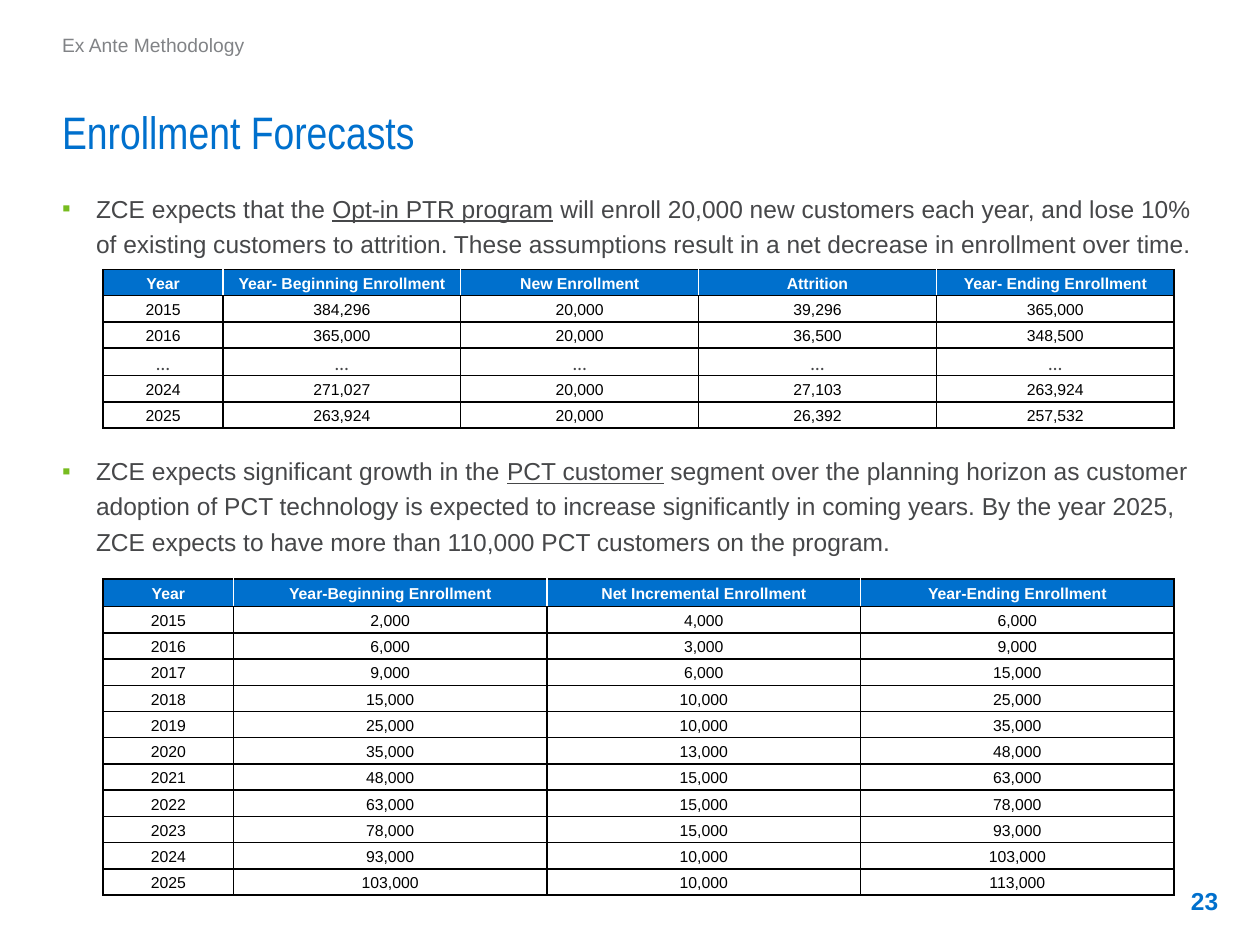
from dataclasses import dataclass

from lxml import etree
from pptx import Presentation
from pptx.dml.color import RGBColor
from pptx.enum.text import MSO_ANCHOR, MSO_AUTO_SIZE, PP_ALIGN
from pptx.oxml.ns import qn
from pptx.util import Pt

LEFT, CENTER, RIGHT = PP_ALIGN.LEFT, PP_ALIGN.CENTER, PP_ALIGN.RIGHT
TOP, MIDDLE, BOTTOM = MSO_ANCHOR.TOP, MSO_ANCHOR.MIDDLE, MSO_ANCHOR.BOTTOM
NO_FIT = MSO_AUTO_SIZE.NONE
COLORS = {
    "blue": "0070CD",
    "green": "77BC1F",
    "text": "464749",
    "gray": "818386",
    "black": "000000",
    "white": "FFFFFF",
}
INSETS = ("margin_left", "margin_top", "margin_right", "margin_bottom")
TABLE_LEFT = 59
ROW_HEIGHT = 15


@dataclass
class Style:
    size: float
    color: str
    name: str = "Arial"
    bold: bool = False


@dataclass
class Bullet:
    before: float
    lead: str
    underlined: str
    rest: str


@dataclass
class EnrollmentTable:
    top: float
    header_height: float
    widths: list[float]
    rows: list[str]


TITLE = Style(26, "blue", "Arial Narrow")
SECTION = Style(11, "gray")
BODY = Style(14, "text")
NUMBER = Style(14, "blue", bold=True)
HEADER = Style(9, "white", bold=True)
CELL = Style(9, "black")
ELLIPSIS = Style(11, "text", "Calibri")

BULLETS = [
    Bullet(0, "ZCE expects that the ", "Opt-in PTR program",
           " will enroll 20,000 new customers each year, and lose 10% of existing "
           "customers to attrition. These assumptions result in a net decrease in "
           "enrollment over time."),
    Bullet(107, "ZCE expects significant growth in the ", "PCT customer",
           " segment over the planning horizon as customer adoption of PCT technology "
           "is expected to increase significantly in coming years. By the year 2025, "
           "ZCE expects to have more than 110,000 PCT customers on the program."),
]

TABLES = [
    EnrollmentTable(154, ROW_HEIGHT, [68.4] + [135.9] * 4, [
        "Year|Year- Beginning Enrollment|New Enrollment|Attrition|Year- Ending Enrollment",
        "2015|384,296|20,000|39,296|365,000",
        "2016|365,000|20,000|36,500|348,500",
        "…|…|…|…|…",
        "2024|271,027|20,000|27,103|263,924",
        "2025|263,924|20,000|26,392|257,532",
    ]),
    EnrollmentTable(330.8, 15.8, [74.4] + [179.2] * 3, [
        "Year|Year-Beginning Enrollment|Net Incremental Enrollment|Year-Ending Enrollment",
        "2015|2,000|4,000|6,000",
        "2016|6,000|3,000|9,000",
        "2017|9,000|6,000|15,000",
        "2018|15,000|10,000|25,000",
        "2019|25,000|10,000|35,000",
        "2020|35,000|13,000|48,000",
        "2021|48,000|15,000|63,000",
        "2022|63,000|15,000|78,000",
        "2023|78,000|15,000|93,000",
        "2024|93,000|10,000|103,000",
        "2025|103,000|10,000|113,000",
    ]),
]


def apply(target, values: dict) -> None:
    for key, value in values.items():
        setattr(target, key, value)


def add_run(p, text: str, style: Style, underline: bool = False) -> None:
    r = p.add_run()
    r.text = text
    apply(r.font, {"size": Pt(style.size), "name": style.name,
                   "bold": style.bold, "underline": underline})
    r.font.color.rgb = RGBColor.from_string(COLORS[style.color])


def place(sp, box: tuple, insets: tuple, anchor, wrap: bool = True):
    apply(sp, dict(zip(("left", "top", "width", "height"), map(Pt, box))))
    tf = sp.text_frame
    apply(tf, dict(zip(INSETS, map(Pt, insets))))
    apply(tf, {"vertical_anchor": anchor, "word_wrap": wrap, "auto_size": NO_FIT})
    return tf


def set_bullet(p, indent: float) -> None:
    ppr = p._p.get_or_add_pPr()
    ppr.set("marL", str(Pt(indent)))
    ppr.set("indent", str(-Pt(indent)))
    if indent:
        clr = etree.SubElement(ppr, qn("a:buClr"))
        etree.SubElement(clr, qn("a:srgbClr"), val=COLORS["green"])
        etree.SubElement(ppr, qn("a:buFont"), typeface="Arial")
        etree.SubElement(ppr, qn("a:buChar"), char="▪")
    else:
        etree.SubElement(ppr, qn("a:buNone"))


def add_bullets(tf, bullets: list[Bullet]) -> None:
    for i, bullet in enumerate(bullets):
        p = tf.add_paragraph() if i else tf.paragraphs[0]
        set_bullet(p, 19.4)
        apply(p, {"line_spacing": 1.2, "space_before": Pt(bullet.before),
                  "space_after": Pt(2.6), "alignment": LEFT})
        add_run(p, bullet.lead, BODY)
        add_run(p, bullet.underlined, BODY, underline=True)
        add_run(p, bullet.rest, BODY)


def set_borders(cell, sides: dict[str, str]) -> None:
    tcpr = cell._tc.get_or_add_tcPr()
    for side, color in sides.items():
        ln = etree.SubElement(tcpr, qn(f"a:ln{side}"), w=str(Pt(1)))
        fill = etree.SubElement(ln, qn("a:solidFill"))
        etree.SubElement(fill, qn("a:srgbClr"), val=COLORS[color])


def fill_cell(cell, text: str, is_header: bool, first: bool, last: bool) -> None:
    apply(cell, dict(zip(INSETS, map(Pt, (5, 0, 5, 0)))))
    cell.vertical_anchor = MIDDLE
    inner = "white" if is_header else "black"
    set_borders(cell, {"L": "black" if first else inner,
                       "R": "black" if last else inner,
                       "T": "black", "B": "black"})
    if is_header:
        cell.fill.solid()
        cell.fill.fore_color.rgb = RGBColor.from_string(COLORS["blue"])
    else:
        cell.fill.background()
    p = cell.text_frame.paragraphs[0]
    apply(p, {"alignment": CENTER, "line_spacing": 1.15})
    add_run(p, text, HEADER if is_header else ELLIPSIS if text == "…" else CELL)


def add_enrollment_table(s, spec: EnrollmentTable) -> None:
    heights = [spec.header_height] + [ROW_HEIGHT] * (len(spec.rows) - 1)
    table = s.shapes.add_table(len(heights), len(spec.widths), Pt(TABLE_LEFT), Pt(spec.top),
                               Pt(sum(spec.widths)), Pt(sum(heights))).table
    apply(table, {"first_row": False, "horz_banding": False})
    for col, width in zip(table.columns, spec.widths):
        col.width = Pt(width)
    for i, (row, height) in enumerate(zip(table.rows, heights)):
        row.height = Pt(height)
        values = spec.rows[i].split("|")
        for j, text in enumerate(values):
            fill_cell(row.cells[j], text, i == 0, j == 0, j == len(values) - 1)


def main() -> None:
    prs = Presentation()
    apply(prs, {"slide_width": Pt(720), "slide_height": Pt(540)})
    s = prs.slides.add_slide(prs.slide_layouts[3])
    title, body, section = s.placeholders
    insets = (0, 3.6, 7.2, 3.6)

    p = place(title, (35.5, 41, 649, 53.3), insets, BOTTOM).paragraphs[0]
    p.alignment = LEFT
    add_run(p, "Enrollment Forecasts", TITLE)

    add_bullets(place(body, (35.5, 103.7, 658, 378.7), insets, TOP), BULLETS)

    p = place(section, (35.5, 13, 554.4, 20.2), insets, TOP, wrap=False).paragraphs[0]
    set_bullet(p, 0)
    apply(p, {"line_spacing": 1.2, "space_before": Pt(0), "space_after": Pt(2.6)})
    add_run(p, "Ex Ante Methodology", SECTION)

    number = s.shapes.add_textbox(0, 0, 0, 0)
    p = place(number, (652.3, 500.4, 50.4, 28.8), (6.5, 2.9, 6.5, 2.9), MIDDLE).paragraphs[0]
    p.alignment = RIGHT
    add_run(p, "23", NUMBER)

    for spec in TABLES:
        add_enrollment_table(s, spec)
    prs.save("out.pptx")


if __name__ == "__main__":
    main()
